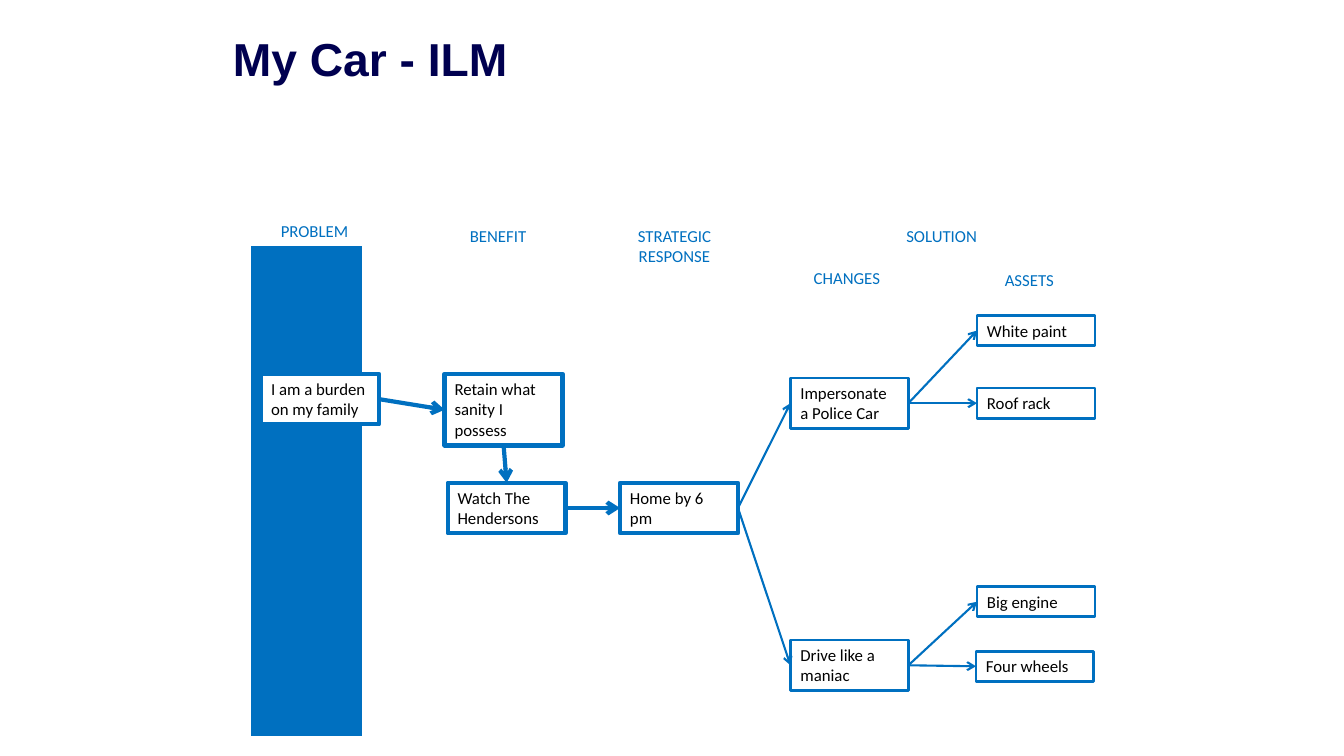
import pptx
import pptx.dml.color
import pptx.enum.shapes
import pptx.enum.text
import pptx.oxml
import pptx.oxml.ns
import pptx.util

Inches = pptx.util.Inches
ALIGN = pptx.enum.text.PP_ALIGN
ANCHOR = pptx.enum.text.MSO_ANCHOR
AUTO_SIZE = pptx.enum.text.MSO_AUTO_SIZE
RECTANGLE = pptx.enum.shapes.MSO_SHAPE.RECTANGLE
STRAIGHT = pptx.enum.shapes.MSO_CONNECTOR.STRAIGHT

BLUE, NAVY, WHITE, BLACK = "0070C0", "000050", "FFFFFF", "000000"
TOP, LEFT, BOTTOM, RIGHT = range(4)
THICK, MEDIUM, THIN = 3, 2, 1.5
NODE_WIDTH, HEADING_WIDTH = 1.17, 1.26
ONE_LINE, TWO_LINES, THREE_LINES = 0.3, 0.5, 0.71

# Positions are relative to the diagram's top left corner
HEADINGS = [
    ("PROBLEM", 0, 0, ONE_LINE),
    ("BENEFIT", 1.82, 0.05, ONE_LINE),
    ("STRATEGIC RESPONSE", 3.57, 0.05, TWO_LINES),
    ("SOLUTION", 6.22, 0.05, ONE_LINE),
    ("CHANGES", 5.28, 0.47, ONE_LINE),
    ("ASSETS", 7.09, 0.49, ONE_LINE),
]
NODES = {
    "burden": ("I am a burden on my family", 0.1, 1.57, TWO_LINES, THICK),
    "police": ("Impersonate a Police Car", 5.35, 1.61, TWO_LINES, MEDIUM),
    "sanity": ("Retain what sanity I possess", 1.92, 1.57, THREE_LINES, THICK),
    "show": ("Watch The Hendersons", 1.95, 2.65, TWO_LINES, THICK),
    "home": ("Home by 6 pm", 3.66, 2.65, TWO_LINES, THICK),
    "maniac": ("Drive like a maniac", 5.35, 4.21, TWO_LINES, MEDIUM),
    "paint": ("White paint", 7.2, 0.99, ONE_LINE, MEDIUM),
    "engine": ("Big engine", 7.2, 3.68, ONE_LINE, MEDIUM),
    "rack": ("Roof rack", 7.2, 1.71, ONE_LINE, MEDIUM),
    "wheels": ("Four wheels", 7.19, 4.32, ONE_LINE, MEDIUM),
}
ARROWS = [
    ("police", RIGHT, "paint", LEFT, THIN),
    ("police", RIGHT, "rack", LEFT, THIN),
    ("maniac", RIGHT, "wheels", LEFT, THIN),
    ("maniac", RIGHT, "engine", LEFT, THIN),
    ("home", RIGHT, "police", LEFT, THIN),
    ("burden", RIGHT, "sanity", LEFT, THICK),
    ("show", RIGHT, "home", LEFT, THICK),
    ("home", RIGHT, "maniac", LEFT, THIN),
    ("sanity", BOTTOM, "show", TOP, THICK),
]


def color(value):
    return pptx.dml.color.RGBColor.from_string(value)


def set_attributes(target, values):
    for name, value in values.items():
        setattr(target, name, value)


def write_text(shape, text, font_color, alignment=ALIGN.LEFT, anchor=ANCHOR.TOP,
               auto_size=AUTO_SIZE.SHAPE_TO_FIT_TEXT, line_spacing=1,
               size=12, name="Calibri", bold=False):
    frame = shape.text_frame
    frame.text = text
    set_attributes(frame, {"word_wrap": True, "auto_size": auto_size,
                           "vertical_anchor": anchor})
    paragraph = frame.paragraphs[0]
    set_attributes(paragraph, {"alignment": alignment, "line_spacing": line_spacing})
    font = paragraph.runs[0].font
    set_attributes(font, {"name": name, "size": pptx.util.Pt(size), "bold": bold})
    font.color.rgb = color(font_color)


def add_rectangle(slide, left, top, width, height, fill, line_width=0):
    shape = slide.shapes.add_shape(
        RECTANGLE, Inches(left), Inches(top), Inches(width), Inches(height))
    shape.shadow.inherit = False
    shape.fill.solid()
    shape.fill.fore_color.rgb = color(fill)
    if line_width:
        shape.line.color.rgb = color(BLUE)
        shape.line.width = pptx.util.Pt(line_width)
    else:
        shape.line.fill.background()
    return shape


def add_arrow(slide, start, start_side, end, end_side, width):
    arrow = slide.shapes.add_connector(STRAIGHT, 0, 0, 0, 0)
    arrow.begin_connect(start, start_side)
    arrow.end_connect(end, end_side)
    arrow.line.color.rgb = color(BLUE)
    arrow.line.width = pptx.util.Pt(width)
    tail = pptx.oxml.parse_xml(
        f'<a:tailEnd {pptx.oxml.ns.nsdecls("a")} type="arrow"/>')
    arrow.line._get_or_add_ln().append(tail)
    arrow._element.spPr.append(
        pptx.oxml.parse_xml(f'<a:effectLst {pptx.oxml.ns.nsdecls("a")}/>'))


def add_title(slide, left, top, width, height):
    title = slide.shapes.title
    set_attributes(title, {"left": Inches(left), "top": Inches(top),
                           "width": Inches(width), "height": Inches(height)})
    write_text(title, "My Car - ILM", NAVY, anchor=ANCHOR.MIDDLE,
               auto_size=AUTO_SIZE.NONE, line_spacing=0.9,
               size=33, name="Arial", bold=True)


def add_benefit_map(slide, left, top):
    # Problem band
    add_rectangle(slide, left, top + 0.04, 1.1, 5.12, BLUE)

    # Boxes
    boxes = {}
    for key, (text, x, y, height, line_width) in NODES.items():
        boxes[key] = add_rectangle(slide, left + x, top + y, NODE_WIDTH, height,
                                   WHITE, line_width)
        write_text(boxes[key], text, BLACK)

    # Arrows
    for start, start_side, end, end_side, width in ARROWS:
        add_arrow(slide, boxes[start], start_side, boxes[end], end_side, width)

    # Column headings
    for text, x, y, height in HEADINGS:
        heading = add_rectangle(slide, left + x, top + y, HEADING_WIDTH, height, WHITE)
        write_text(heading, text, BLUE, alignment=ALIGN.CENTER)


def main():
    presentation = pptx.Presentation()
    presentation.slide_width = Inches(13.33)
    presentation.slide_height = Inches(7.5)
    slide = presentation.slides.add_slide(presentation.slide_layouts[5])
    add_title(slide, 2.21, 0, 11.1, 1.22)
    add_benefit_map(slide, 2.49, 2.14)
    presentation.save("out.pptx")


if __name__ == "__main__":
    main()
